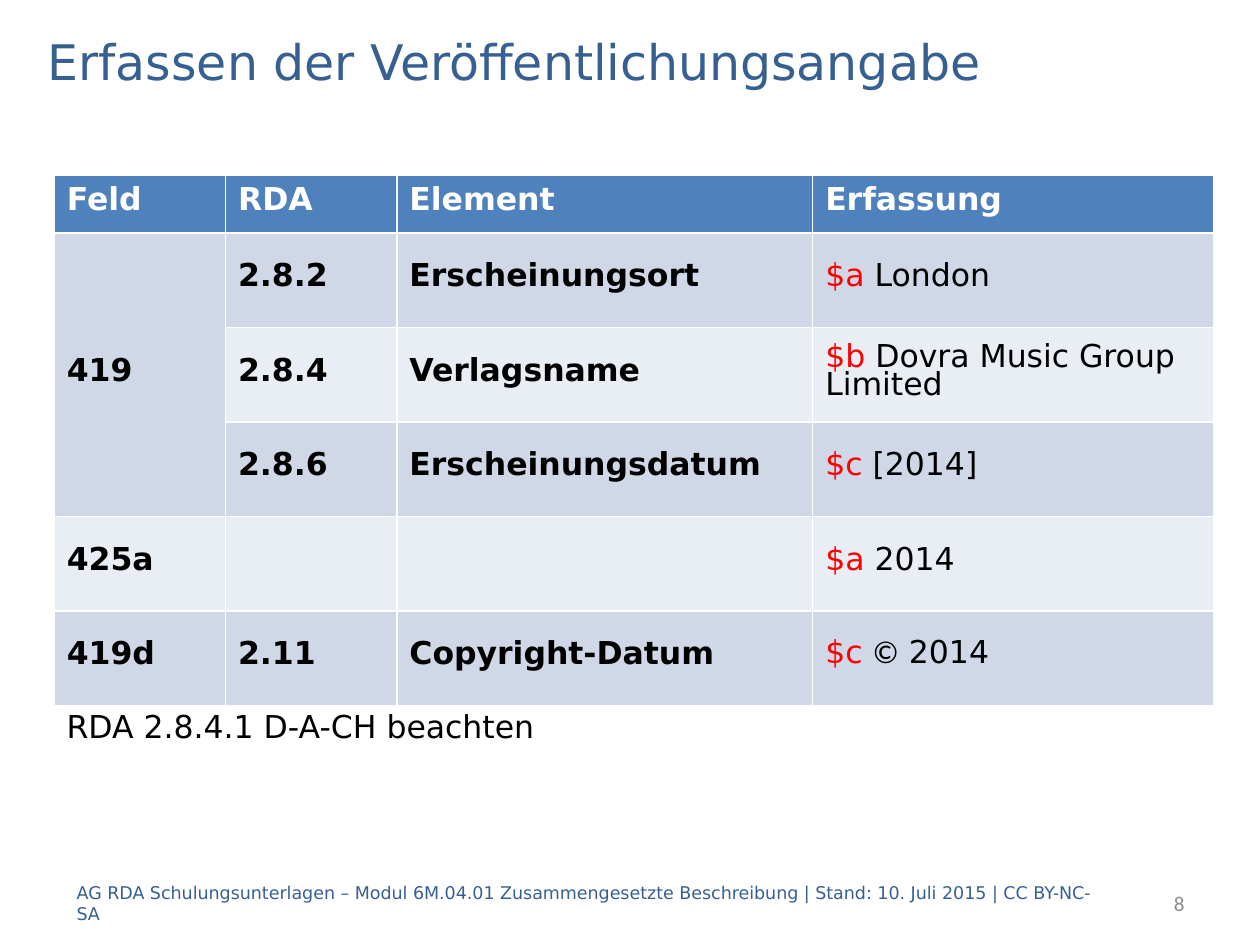
from dataclasses import dataclass

from pptx import Presentation
from pptx.dml.color import RGBColor
from pptx.enum.text import MSO_ANCHOR, PP_ALIGN
from pptx.util import Inches, Pt

MIDDLE = MSO_ANCHOR.MIDDLE
LEFT, RIGHT = PP_ALIGN.LEFT, PP_ALIGN.RIGHT


@dataclass(frozen=True)
class Theme:
    font: str = "DejaVu Sans"
    symbol_font: str = "Calibri"
    heading: str = "376092"
    text: str = "000000"
    code: str = "FF0000"
    number: str = "8C8C8C"
    header_text: str = "FFFFFF"
    header_fill: str = "4F81BD"
    bands: tuple = ("D0D8E8", "E9EDF4")
    title_size: int = 28
    body_size: int = 18
    number_size: int = 12
    footer_size: int = 10


THEME = Theme()

TITLE = "Erfassen der Veröffentlichungsangabe"
NOTE = "RDA 2.8.4.1 D-A-CH beachten"
FOOTER = (
    "AG RDA Schulungsunterlagen – Modul 6M.04.01 Zusammengesetzte Beschreibung"
    " | Stand: 10. Juli 2015 | CC BY-NC-SA"
)
PAGE_NUMBER = "8"

HEADER = ("Feld", "RDA", "Element", "Erfassung")
ROWS = [
    ("419", "2.8.2", "Erscheinungsort", ("$a", " London")),
    ("", "2.8.4", "Verlagsname", ("$b", " Dovra Music Group Limited")),
    ("", "2.8.6", "Erscheinungsdatum", ("$c", " [2014]")),
    ("425a", "", "", ("$a", " 2014")),
    ("419d", "2.11", "Copyright-Datum", ("$c ", "©", " 2014")),
]
MERGED_ROWS = (1, 3)
COLUMN_WIDTHS = (1.36, 1.36, 3.3, 3.18)
HEADER_HEIGHT, ROW_HEIGHT = 0.46, 0.75
TABLE_LEFT, TABLE_TOP = 0.43, 1.39

TEXT_BOXES = [
    (PAGE_NUMBER, (7.91, 6.97, 1.59, 0.4), THEME.symbol_font, THEME.number_size, THEME.number, RIGHT),
    (TITLE, (0.28, 0.2, 9.45, 0.56), THEME.font, THEME.title_size, THEME.heading, LEFT),
    (FOOTER, (0.51, 6.97, 8.35, 0.4), THEME.font, THEME.footer_size, THEME.heading, LEFT),
    (NOTE, (0.43, 5.48, 9.45, 0.56), THEME.font, THEME.body_size, THEME.text, LEFT),
]


def set_font(font, name, size, color, bold=False):
    font.name, font.size, font.bold = name, Pt(size), bold
    font.color.rgb = RGBColor.from_string(color)


def add_text(slide, text, box, name, size, color, alignment):
    shape = slide.shapes.add_textbox(*map(Inches, box))
    frame = shape.text_frame
    frame.word_wrap, frame.vertical_anchor = True, MIDDLE
    paragraph = frame.paragraphs[0]
    paragraph.text, paragraph.alignment = text, alignment
    set_font(paragraph.font, name, size, color)


def fill_cell(cell, color):
    cell.fill.solid()
    cell.fill.fore_color.rgb = RGBColor.from_string(color)


def write_body_cell(cell, content):
    cell.vertical_anchor = MIDDLE
    paragraph = cell.text_frame.paragraphs[0]
    paragraph.line_spacing = Pt(16)
    paragraph.space_before = paragraph.space_after = Pt(6)
    if isinstance(content, str):
        paragraph.text = content
        set_font(paragraph.font, THEME.font, THEME.body_size, THEME.text, True)
        return
    for index, text in enumerate(content):
        run = paragraph.add_run()
        run.text = text
        name = THEME.symbol_font if text == "©" else THEME.font
        color = THEME.text if index else THEME.code
        set_font(run.font, name, THEME.body_size, color)


def add_field_table(slide):
    height = HEADER_HEIGHT + ROW_HEIGHT * len(ROWS)
    box = (TABLE_LEFT, TABLE_TOP, sum(COLUMN_WIDTHS), height)
    table = slide.shapes.add_table(len(ROWS) + 1, len(HEADER), *map(Inches, box)).table
    for column, width in zip(table.columns, COLUMN_WIDTHS):
        column.width = Inches(width)
    for index, row in enumerate(table.rows):
        row.height = Inches(ROW_HEIGHT if index else HEADER_HEIGHT)
    for column, label in enumerate(HEADER):
        cell = table.cell(0, column)
        fill_cell(cell, THEME.header_fill)
        cell.text = label
        font = cell.text_frame.paragraphs[0].font
        set_font(font, THEME.font, THEME.body_size, THEME.header_text, True)
    for index, contents in enumerate(ROWS):
        for column, content in enumerate(contents):
            cell = table.cell(index + 1, column)
            fill_cell(cell, THEME.bands[index % 2])
            if content:
                write_body_cell(cell, content)
    first, last = MERGED_ROWS
    table.cell(first, 0).merge(table.cell(last, 0))


def main():
    """Build the slide on recording publication statements."""
    presentation = Presentation()
    presentation.slide_width, presentation.slide_height = Inches(10), Inches(7.5)
    slide = presentation.slides.add_slide(presentation.slide_layouts[6])
    add_field_table(slide)
    for text_box in TEXT_BOXES:
        add_text(slide, *text_box)
    presentation.save("out.pptx")


if __name__ == "__main__":
    main()
